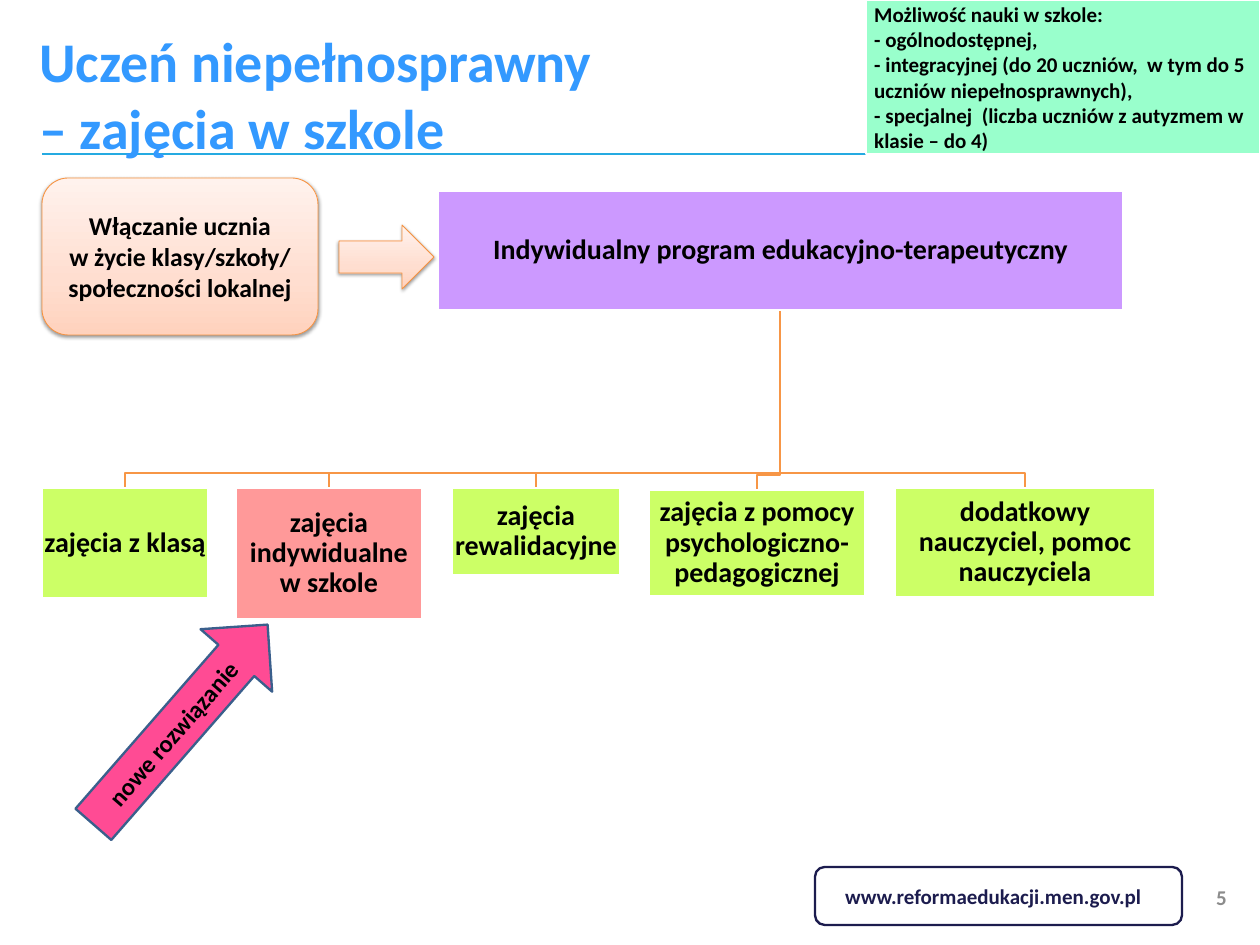
import copy

import lxml.etree
import pptx
import pptx.dml.color
import pptx.enum.shapes
import pptx.enum.text
import pptx.oxml.ns
import pptx.util

RGBColor = pptx.dml.color.RGBColor
Shape = pptx.enum.shapes.MSO_SHAPE
Align = pptx.enum.text.PP_ALIGN
Anchor = pptx.enum.text.MSO_ANCHOR
qn = pptx.oxml.ns.qn

PX = 914400 / 84
BLACK = RGBColor(0x00, 0x00, 0x00)
WHITE = RGBColor(0xFF, 0xFF, 0xFF)
TITLE_BLUE = RGBColor(0x33, 0x99, 0xFF)
RULE_BLUE = RGBColor(0x25, 0xAA, 0xE1)
NAVY = RGBColor(0x1C, 0x1C, 0x4E)
GRAY = RGBColor(0x8C, 0x8C, 0x8C)
ORANGE = RGBColor(0xF7, 0x96, 0x46)
PEACH_LINE = RGBColor(0xF6, 0x92, 0x40)
PEACH_STOPS = [
    (0, RGBColor(0xFF, 0xD2, 0xBD)),
    (0.35, RGBColor(0xFF, 0xDE, 0xD0)),
    (1, RGBColor(0xFF, 0xF2, 0xED)),
]
VIOLET = RGBColor(0xCC, 0x99, 0xFF)
LIME = RGBColor(0xCC, 0xFF, 0x66)
SALMON = RGBColor(0xFF, 0x99, 0x99)
MINT = RGBColor(0x99, 0xFF, 0xCC)
PINK = RGBColor(0xFF, 0x4B, 0x94)
STEEL = RGBColor(0x3A, 0x5F, 0x8C)

TIGHT = (2, 2, 2, 2)
BUS_GAP = 15


def emu(px):
    return pptx.util.Emu(round(px * PX))


def set_values(obj, values):
    for name, value in values.items():
        setattr(obj, name, value)


def write(sp, lines, size, color=BLACK, align=Align.CENTER, anchor=Anchor.MIDDLE,
          insets=None, spacing=None):
    tf = sp.text_frame
    set_values(tf, {"word_wrap": True, "vertical_anchor": anchor})
    if insets:
        sides = ("margin_left", "margin_top", "margin_right", "margin_bottom")
        set_values(tf, dict(zip(sides, map(emu, insets))))
    for i, line in enumerate(lines):
        p = tf.add_paragraph() if i else tf.paragraphs[0]
        p.text = line
        set_values(p, {"alignment": align, "line_spacing": spacing})
        for r in p.runs:
            set_values(r.font, {"name": "Calibri", "size": pptx.util.Pt(size), "bold": True})
            r.font.color.rgb = color


def add_text(slide, box, lines, size, **fmt):
    write(slide.shapes.add_textbox(*map(emu, box)), lines, size, **fmt)


def add_box(slide, kind, box, fill, line, width=2):
    sp = slide.shapes.add_shape(kind, *map(emu, box))
    sp.shadow.inherit = False
    if fill is None:
        sp.fill.background()
    else:
        sp.fill.solid()
        sp.fill.fore_color.rgb = fill
    sp.line.color.rgb = line
    sp.line.width = pptx.util.Pt(width)
    return sp


def add_peach(slide, kind, box):
    sp = add_box(slide, kind, box, None, PEACH_LINE, 0.75)
    sp.fill.gradient()
    sp.fill.gradient_angle = 90
    spPr = sp._element.spPr
    gs_list = spPr.find(".//" + qn("a:gsLst"))
    gs_list.append(copy.deepcopy(gs_list[-1]))
    for stop, (position, color) in zip(sp.fill.gradient_stops, PEACH_STOPS):
        stop.position = position
        stop.color.rgb = color
    shadow = lxml.etree.SubElement(
        spPr.find(qn("a:effectLst")), qn("a:outerShdw"),
        blurRad="39370", dist="20320", dir="5400000", rotWithShape="0")
    color = lxml.etree.SubElement(shadow, qn("a:srgbClr"), val=str(BLACK))
    lxml.etree.SubElement(color, qn("a:alpha"), val="38000")
    return sp


def add_header(slide, box):
    x, y, w, h = box
    split = x + 866
    rule = slide.shapes.add_connector(
        pptx.enum.shapes.MSO_CONNECTOR.STRAIGHT,
        emu(x + 42), emu(y + h), emu(split), emu(y + h))
    rule.line.color.rgb = RULE_BLUE
    rule.line.width = pptx.util.Pt(2.25)
    lxml.etree.SubElement(rule._element.spPr, qn("a:effectLst"))
    add_text(slide, (x + 31, y + 22, 828, 144),
             ["Uczeń niepełnosprawny\v– zajęcia w szkole"], 48,
             color=TITLE_BLUE, align=Align.LEFT, anchor=Anchor.TOP)
    note = add_box(slide, Shape.RECTANGLE, (split, y, x + w - split, h), MINT, WHITE)
    write(note, [
        "Możliwość nauki w szkole:",
        "- ogólnodostępnej,",
        "- integracyjnej (do 20 uczniów,  w tym do 5 uczniów niepełnosprawnych),",
        "- specjalnej  (liczba uczniów z autyzmem w klasie – do 4)",
    ], 18, align=Align.LEFT)


def add_inclusion(slide, box):
    x, y, w, h = box
    sp = add_peach(slide, Shape.ROUNDED_RECTANGLE, (x, y, 276, h))
    write(sp, ["Włączanie ucznia", "w życie klasy/szkoły/", "społeczności lokalnej"], 22)
    add_peach(slide, Shape.RIGHT_ARROW, (x + w - 95, y + 47, 95, 64))


def add_program_tree(slide, box):
    x, y, w, h = box
    root = (x + 396, y, 685, 119)
    classes = [
        ("zajęcia z klasą", 0, 297, 166, 110, LIME),
        ("zajęcia indywidualne\vw szkole", 194, 297, 186, 131, SALMON),
        ("zajęcia rewalidacyjne", 410, 297, 168, 87, LIME),
        ("zajęcia z pomocy psychologiczno-pedagogicznej", 607, 299, 216, 106, LIME),
        ("dodatkowy nauczyciel, pomoc nauczyciela", 853, 297, 260, 109, LIME),
    ]
    root_x, root_y = root[0] + root[2] / 2, root[1] + root[3]
    for _, dx, dy, cw, _, _ in classes:
        mid, top = x + dx + cw / 2, y + dy
        fb = slide.shapes.build_freeform(root_x, root_y, scale=PX)
        fb.add_line_segments(
            [(root_x, top - BUS_GAP), (mid, top - BUS_GAP), (mid, top)], close=False)
        sp = fb.convert_to_shape()
        sp.shadow.inherit = False
        sp.fill.background()
        sp.line.color.rgb = ORANGE
        sp.line.width = pptx.util.Pt(2)
    nodes = [("Indywidualny program edukacyjno-terapeutyczny", root, VIOLET)]
    nodes += [(text, (x + dx, y + dy, cw, ch), fill)
              for text, dx, dy, cw, ch, fill in classes]
    for text, node_box, fill in nodes:
        sp = add_box(slide, Shape.RECTANGLE, node_box, fill, WHITE)
        write(sp, [text], 24, insets=TIGHT, spacing=0.9)


def add_new_solution(slide, box):
    sp = add_box(slide, Shape.RIGHT_ARROW, box, PINK, STEEL)
    sp.rotation = 311.1
    write(sp, ["nowe rozwiązanie"], 21)


def add_footer(slide, box):
    x, y, w, h = box
    add_box(slide, Shape.ROUNDED_RECTANGLE, (x, y, 367, h), None, NAVY)
    add_text(slide, (x + 22, y + 12, 319, 34), ["www.reformaedukacji.men.gov.pl"], 18,
             color=NAVY, align=Align.LEFT)
    add_text(slide, (x + w - 77, y + 5, 77, 50), ["5"], 18,
             color=GRAY, insets=(13, 6, 13, 6))


def main():
    prs = pptx.Presentation()
    set_values(prs, {"slide_width": emu(1260), "slide_height": emu(945)})
    slide = prs.slides.add_slide(prs.slide_layouts[6])
    add_footer(slide, (815, 867, 445, 58))
    add_header(slide, (0, 0, 1260, 154))
    add_program_tree(slide, (42, 191, 1113, 428))
    add_inclusion(slide, (42, 178, 392, 157))
    add_new_solution(slide, (48, 677, 265, 95))
    prs.save("out.pptx")


if __name__ == "__main__":
    main()
